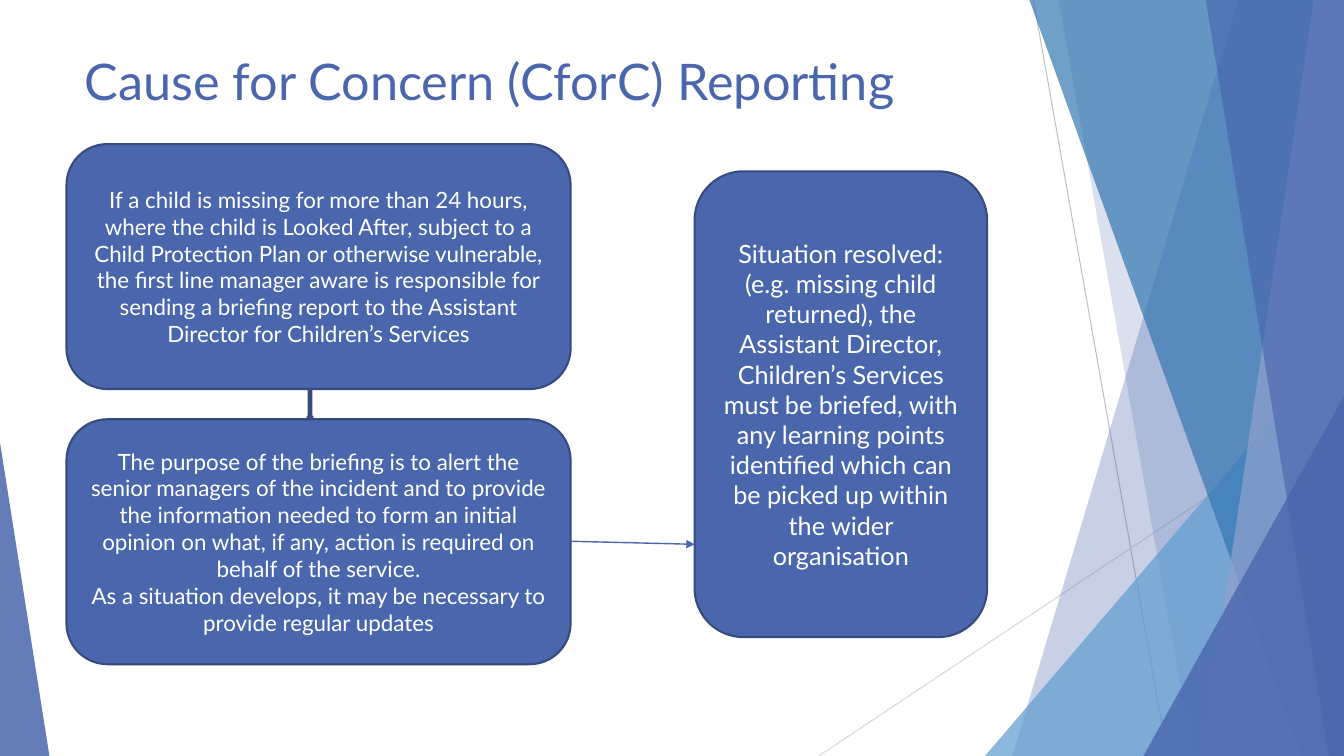
import pptx
import pptx.util
import pptx.dml.color
import pptx.enum.shapes
import pptx.enum.text
import pptx.oxml.ns
import pptx.oxml.xmlchemy

Inches, Pt = pptx.util.Inches, pptx.util.Pt
RGBColor = pptx.dml.color.RGBColor
Shape = pptx.enum.shapes.MSO_SHAPE
Align, Anchor = pptx.enum.text.PP_ALIGN, pptx.enum.text.MSO_ANCHOR
qn = pptx.oxml.ns.qn
OxmlElement = pptx.oxml.xmlchemy.OxmlElement

# Content
TITLE = "Cause for Concern (CforC) Reporting"
REPORT = ["If a child is missing for more than 24 hours, where the child is Looked After, "
          "subject to a Child Protection Plan or otherwise vulnerable, the first line manager "
          "aware is responsible for sending a briefing report to the Assistant Director for "
          "Children’s Services"]
PURPOSE = ["The purpose of the briefing is to alert the senior managers of the incident and to "
           "provide the information needed to form an initial opinion on what, if any, action is "
           "required on behalf of the service.",
           "As a situation develops, it may be necessary to provide regular updates"]
RESOLVED = ["Situation resolved: (e.g. missing child returned), the Assistant Director, "
            "Children’s Services must be briefed, with any learning points identified which can "
            "be picked up within the wider organisation"]

# Style
FONT = "Lato"
BLUE = RGBColor(0x4A, 0x66, 0xAC)
NAVY = RGBColor(0x37, 0x4B, 0x7F)
SKY = RGBColor(0x62, 0x9D, 0xD1)
TEAL = RGBColor(0x34, 0x77, 0xB2)
LAVENDER = RGBColor(0x90, 0xA2, 0xCF)
GREY = RGBColor(0xBF, 0xBF, 0xBF)
PALE_GREY = RGBColor(0xD9, 0xD9, 0xD9)
WHITE = RGBColor(0xFF, 0xFF, 0xFF)

# Layout, in inches
WIDTH, HEIGHT = 13.33, 7.5
BOX_LEFT, BOX_TOP, BOX_WIDTH, BOX_HEIGHT, BOX_GAP = 0.66, 1.43, 5, 2.43, 0.3
SECOND_TOP = BOX_TOP + BOX_HEIGHT + BOX_GAP
RESOLVED_LEFT = 6.89
BOXES = [  # left, top, width, height, text size, paragraphs
    (BOX_LEFT, BOX_TOP, BOX_WIDTH, BOX_HEIGHT, 16, REPORT),
    (BOX_LEFT, SECOND_TOP, BOX_WIDTH, BOX_HEIGHT, 16, PURPOSE),
    (RESOLVED_LEFT, 1.7, 2.9, 4.62, 18, RESOLVED),
]
RAYS = [((10.25, 0), (11.58, HEIGHT), GREY), ((WIDTH, 4.03), (8.12, HEIGHT), PALE_GREY)]
# Bands reach the right edge: top-left x, bottom-left x, colour, opacity in percent
# Triangles stand on the bottom edge: left, width, height, apex, colour, opacity
BACKDROP = [
    ("band", 12.28, 10.04, BLUE, 30),
    ("band", 10.5, 11.83, BLUE, 20),
    ("triangle", 9.77, 3.56, 4.17, 1, SKY, 72),
    ("band", 10.21, 12.91, TEAL, 70),
    ("band", 13.03, 11.92, LAVENDER, 70),
    ("band", 11.96, 13.18, BLUE, 65),
    ("triangle", 11.34, 1.99, 3.57, 1, BLUE, 80),
    ("triangle", 0, 0.49, 3.11, 0, BLUE, 85),
]

presentation = pptx.Presentation()
presentation.slide_width, presentation.slide_height = Inches(WIDTH), Inches(HEIGHT)
slide = presentation.slides.add_slide(presentation.slide_layouts[5])
shapes = slide.shapes


def add_line(start, end, color, width):
    line = shapes.add_connector(pptx.enum.shapes.MSO_CONNECTOR.STRAIGHT,
                                *(Inches(value) for value in (*start, *end)))
    line.line.color.rgb, line.line.width = color, Pt(width)
    line._element.spPr.append(OxmlElement("a:effectLst"))
    return line


def paint(shape, color, opacity=100, outline=None):
    shape.shadow.inherit = False
    shape.fill.solid()
    shape.fill.fore_color.rgb = color
    if opacity < 100:
        alpha = OxmlElement("a:alpha")
        alpha.set("val", str(opacity * 1000))
        shape._element.spPr.find(".//" + qn("a:srgbClr")).append(alpha)
    if outline is None:
        shape.line.fill.background()
    else:
        shape.line.color.rgb, shape.line.width = outline, Pt(1.5)


def add_preset(kind, left, top, width, height):
    return shapes.add_shape(kind, Inches(left), Inches(top), Inches(width), Inches(height))


def add_band(top_x, bottom_x):
    builder = shapes.build_freeform(Inches(top_x), 0)
    corners = [(WIDTH, 0), (WIDTH, HEIGHT), (bottom_x, HEIGHT)]
    builder.add_line_segments([(Inches(x), Inches(y)) for x, y in corners], close=True)
    return builder.convert_to_shape()


def add_triangle(left, width, height, apex):
    triangle = add_preset(Shape.ISOSCELES_TRIANGLE, left, HEIGHT - height, width, height)
    triangle.adjustments[0] = apex
    return triangle


# Backdrop of rays and facets
for start, end, color in RAYS:
    add_line(start, end, color, 0.75)
for kind, *geometry, color, opacity in BACKDROP:
    facet = add_band(*geometry) if kind == "band" else add_triangle(*geometry)
    paint(facet, color, opacity)

# Title, in front of the backdrop
title = shapes.title
title.left, title.top, title.width, title.height = map(Inches, (0.74, 0.44, 9.4, 0.72))
title.text_frame.text = TITLE
title.text_frame.vertical_anchor = Anchor.MIDDLE
heading = title.text_frame.paragraphs[0]
heading.alignment = Align.LEFT
heading.font.name, heading.font.size, heading.font.color.rgb = FONT, Pt(36), BLUE
title._element.getparent().append(title._element)

# Process boxes
for left, top, width, height, size, texts in BOXES:
    box = add_preset(Shape.ROUNDED_RECTANGLE, left, top, width, height)
    paint(box, BLUE, outline=NAVY)
    frame = box.text_frame
    frame.word_wrap, frame.vertical_anchor = True, Anchor.MIDDLE
    frame.text = "\n".join(texts)
    for paragraph in frame.paragraphs:
        paragraph.alignment = Align.CENTER
        paragraph.font.name, paragraph.font.size = FONT, Pt(size)
        paragraph.font.color.rgb = WHITE

# Arrows between the boxes
down_arrow = add_preset(Shape.DOWN_ARROW, 3.05, BOX_TOP + BOX_HEIGHT, 0.05, BOX_GAP)
paint(down_arrow, BLUE, outline=NAVY)
link = add_line((BOX_LEFT + BOX_WIDTH, 5.37), (RESOLVED_LEFT, 5.4), BLUE, 1)
arrowhead = OxmlElement("a:tailEnd")
arrowhead.set("type", "triangle")
link._element.spPr.find(qn("a:ln")).append(arrowhead)

presentation.save("out.pptx")
